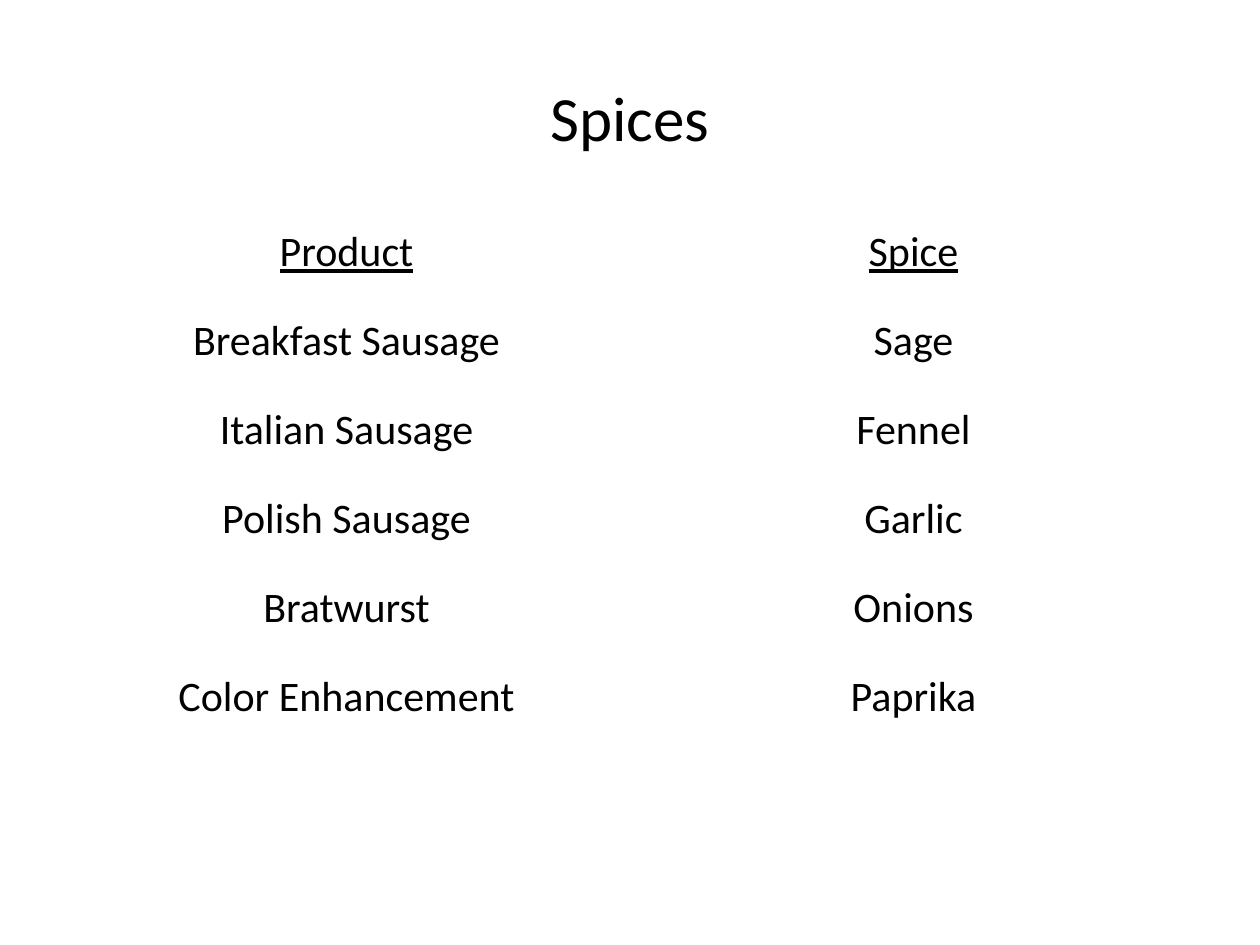
from dataclasses import dataclass
from typing import NamedTuple

from lxml.etree import SubElement
from pptx import Presentation
from pptx.dml.color import RGBColor
from pptx.enum.text import MSO_ANCHOR as Anchor, PP_ALIGN as Align
from pptx.oxml.ns import qn
from pptx.util import Inches, Pt


@dataclass(frozen=True)
class Theme:
    font: str = "Calibri"
    ink: str = "000000"
    border: str = "FFFFFF"
    border_width: float = 1
    title_size: float = 36
    table_size: float = 24
    paragraph_gap: float = 4.8


class SpiceRow(NamedTuple):
    product: str
    spice: str


THEME = Theme()
LEFT, WIDTH = Inches(0.5), Inches(9)
HEADER = SpiceRow("Product", "Spice")
SPICES = [
    SpiceRow("Breakfast Sausage", "Sage"),
    SpiceRow("Italian Sausage", "Fennel"),
    SpiceRow("Polish Sausage", "Garlic"),
    SpiceRow("Bratwurst", "Onions"),
    SpiceRow("Color Enhancement", "Paprika"),
]


def write_centered(frame, text: str, size: float, underline: bool = False) -> None:
    frame.text = text
    para = frame.paragraphs[0]
    para.alignment = Align.CENTER
    font = para.runs[0].font
    font.name = THEME.font
    font.size = Pt(size)
    font.bold = False
    font.underline = underline
    font.color.rgb = RGBColor.from_string(THEME.ink)


def add_title(page, text: str) -> None:
    box = page.shapes.add_textbox(LEFT, Inches(0.3), WIDTH, Inches(1.25))
    frame = box.text_frame
    frame.word_wrap = True
    frame.vertical_anchor = Anchor.MIDDLE
    write_centered(frame, text, THEME.title_size)


def style_cell(cell) -> None:
    """Clear the fill and outline all four sides."""
    properties = cell._tc.get_or_add_tcPr()
    for side in ("lnL", "lnR", "lnT", "lnB"):
        line = SubElement(properties, qn(f"a:{side}"), w=str(Pt(THEME.border_width)))
        fill = SubElement(line, qn("a:solidFill"))
        SubElement(fill, qn("a:srgbClr"), val=THEME.border)
    cell.fill.background()


def add_spice_table(page, rows: list[SpiceRow]) -> None:
    frame = page.shapes.add_table(
        len(rows), len(HEADER), LEFT, Inches(1.75), WIDTH, Inches(4.24)
    )
    table = frame.table
    table.first_row = False
    table.horz_banding = False
    for row_index, row in enumerate(rows):
        for column_index, text in enumerate(row):
            cell = table.cell(row_index, column_index)
            write_centered(cell.text_frame, text, THEME.table_size, row is HEADER)
            cell.text_frame.paragraphs[0].space_before = Pt(THEME.paragraph_gap)
            style_cell(cell)


def main() -> None:
    deck = Presentation()
    deck.slide_width, deck.slide_height = Inches(10), Inches(7.5)
    page = deck.slides.add_slide(deck.slide_layouts[6])
    add_title(page, "Spices")
    add_spice_table(page, [HEADER, *SPICES])
    deck.save("out.pptx")


if __name__ == "__main__":
    main()
